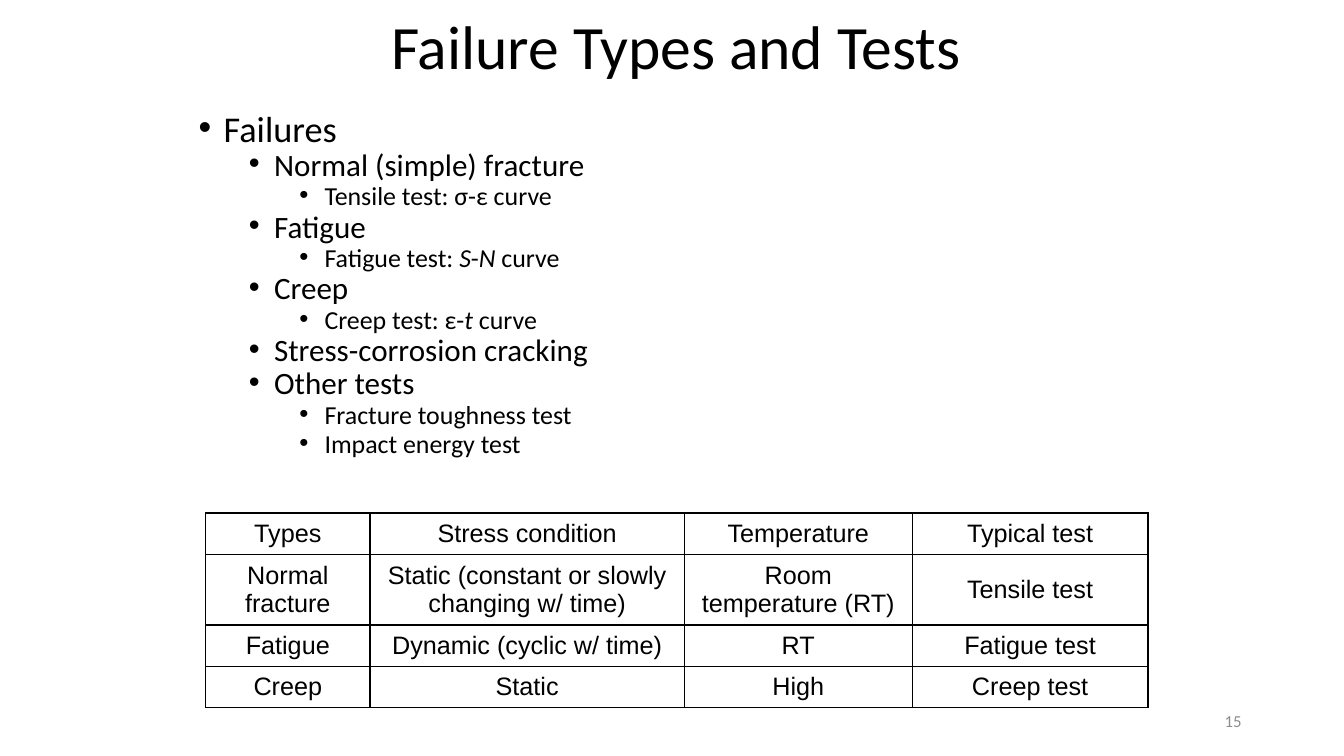
"""Build the slide on failure types and their tests."""
from dataclasses import dataclass

from lxml.etree import SubElement
from pptx import Presentation
from pptx.dml.color import RGBColor
from pptx.enum.text import MSO_ANCHOR, PP_ALIGN
from pptx.oxml import parse_xml
from pptx.oxml.ns import nsdecls, qn
from pptx.slide import Slide
from pptx.table import _Cell
from pptx.text.text import Font, TextFrame
from pptx.util import Pt

BLACK, GREY = "000000", "8C8C8C"
SIZES = (25.9, 22.2, 18.5)
WIDTHS = (117.4, 224.6, 162.7, 168.5)
HEIGHTS = (29.5, 47.2, 29.5, 29.5)


@dataclass(frozen=True)
class Box:
    left: float
    top: float
    width: float
    height: float


@dataclass(frozen=True)
class Label:
    box: Box
    text: str
    size: float
    color: str
    align: PP_ALIGN
    lines: float


@dataclass(frozen=True)
class Point:
    level: int
    text: str


LABELS = (
    Label(Box(69, -3, 828, 77), "Failure Types and Tests", 44, BLACK, PP_ALIGN.CENTER, 0.9),
    Label(Box(678, 500.4, 216, 28.8), "15", 12, GREY, PP_ALIGN.RIGHT, 1.0),
)
POINTS = (
    Point(0, "Failures"),
    Point(1, "Normal (simple) fracture"),
    Point(2, "Tensile test: σ-ε curve"),
    Point(1, "Fatigue"),
    Point(2, "Fatigue test: *S*-*N* curve"),
    Point(1, "Creep"),
    Point(2, "Creep test: ε-*t* curve"),
    Point(1, "Stress-corrosion cracking"),
    Point(1, "Other tests"),
    Point(2, "Fracture toughness test"),
    Point(2, "Impact energy test"),
)
ROWS = (
    ("Types", "Stress condition", "Temperature", "Typical test"),
    ("Normal fracture", "Static (constant or slowly changing w/ time)",
     "Room temperature (RT)", "Tensile test"),
    ("Fatigue", "Dynamic (cyclic w/ time)", "RT", "Fatigue test"),
    ("Creep", "Static", "High", "Creep test"),
)


def paint(font: Font, name: str, size: float, color: str) -> None:
    """Set the face, size and colour of a font."""
    font.name, font.size = name, Pt(size)
    font.color.rgb = RGBColor.from_string(color)


def add_frame(slide: Slide, box: Box) -> TextFrame:
    """Add a wrapping text box and return its frame."""
    shape = slide.shapes.add_textbox(Pt(box.left), Pt(box.top), Pt(box.width), Pt(box.height))
    shape.text_frame.word_wrap = True
    return shape.text_frame


def add_label(slide: Slide, label: Label) -> None:
    """Add one line of text, centred in height."""
    frame = add_frame(slide, label.box)
    frame.vertical_anchor = MSO_ANCHOR.MIDDLE
    para = frame.paragraphs[0]
    para.text, para.alignment, para.line_spacing = label.text, label.align, label.lines
    paint(para.font, "Calibri", label.size, label.color)


def add_points(slide: Slide, box: Box, points: tuple[Point, ...]) -> None:
    """Add the bullet list, with starred parts in italics."""
    frame = add_frame(slide, box)
    frame.margin_left = frame.margin_right = frame.margin_top = frame.margin_bottom = 0
    for index, point in enumerate(points):
        para = frame.add_paragraph() if index else frame.paragraphs[0]
        para.level, para.line_spacing = point.level, 0.7
        para.space_before = Pt(5 if point.level else 10)
        paint(para.font, "Calibri", SIZES[point.level], BLACK)
        for turn, part in enumerate(point.text.split("*")):
            run = para.add_run()
            run.text = part
            if turn % 2:
                run.font.italic = True
        props = para._p.get_or_add_pPr()
        props.set("marL", str(Pt(18 + 36 * point.level)))
        props.set("indent", str(Pt(-18)))
        mark = parse_xml(f'<a:buFont {nsdecls("a")} typeface="Arial"/>')
        props.insert_element_before(mark, "a:defRPr")
        sign = parse_xml(f'<a:buChar {nsdecls("a")} char="•"/>')
        props.insert_element_before(sign, "a:defRPr")


def add_edges(cell: _Cell) -> None:
    """Draw a thin black line on each side of a cell."""
    props = cell._tc.get_or_add_tcPr()
    for side in ("lnL", "lnR", "lnT", "lnB"):
        line = SubElement(props, qn(f"a:{side}"), w=str(Pt(1)))
        SubElement(SubElement(line, qn("a:solidFill")), qn("a:srgbClr"), val=BLACK)


def add_grid(slide: Slide, box: Box) -> None:
    """Add the table of failure types."""
    frame = slide.shapes.add_table(len(ROWS), len(WIDTHS), Pt(box.left), Pt(box.top),
                                   Pt(box.width), Pt(box.height))
    table = frame.table
    table.first_row = table.horz_banding = False
    for column, width in zip(table.columns, WIDTHS):
        column.width = Pt(width)
    for row, height, texts in zip(table.rows, HEIGHTS, ROWS):
        row.height = Pt(height)
        for cell, text in zip(row.cells, texts):
            cell.text, cell.vertical_anchor = text, MSO_ANCHOR.MIDDLE
            para = cell.text_frame.paragraphs[0]
            para.alignment = PP_ALIGN.CENTER
            paint(para.font, "Arial", 18, BLACK)
            add_edges(cell)
            cell.fill.background()


def main() -> None:
    """Build and save the slide."""
    deck = Presentation()
    deck.slide_width, deck.slide_height = Pt(960), Pt(540)
    slide = deck.slides.add_slide(deck.slide_layouts[6])
    for label in LABELS:
        add_label(slide, label)
    add_points(slide, Box(141.8, 84.2, 682.6, 257.8), POINTS)
    add_grid(slide, Box(146.9, 366.5, sum(WIDTHS), sum(HEIGHTS)))
    deck.save("out.pptx")


if __name__ == "__main__":
    main()
